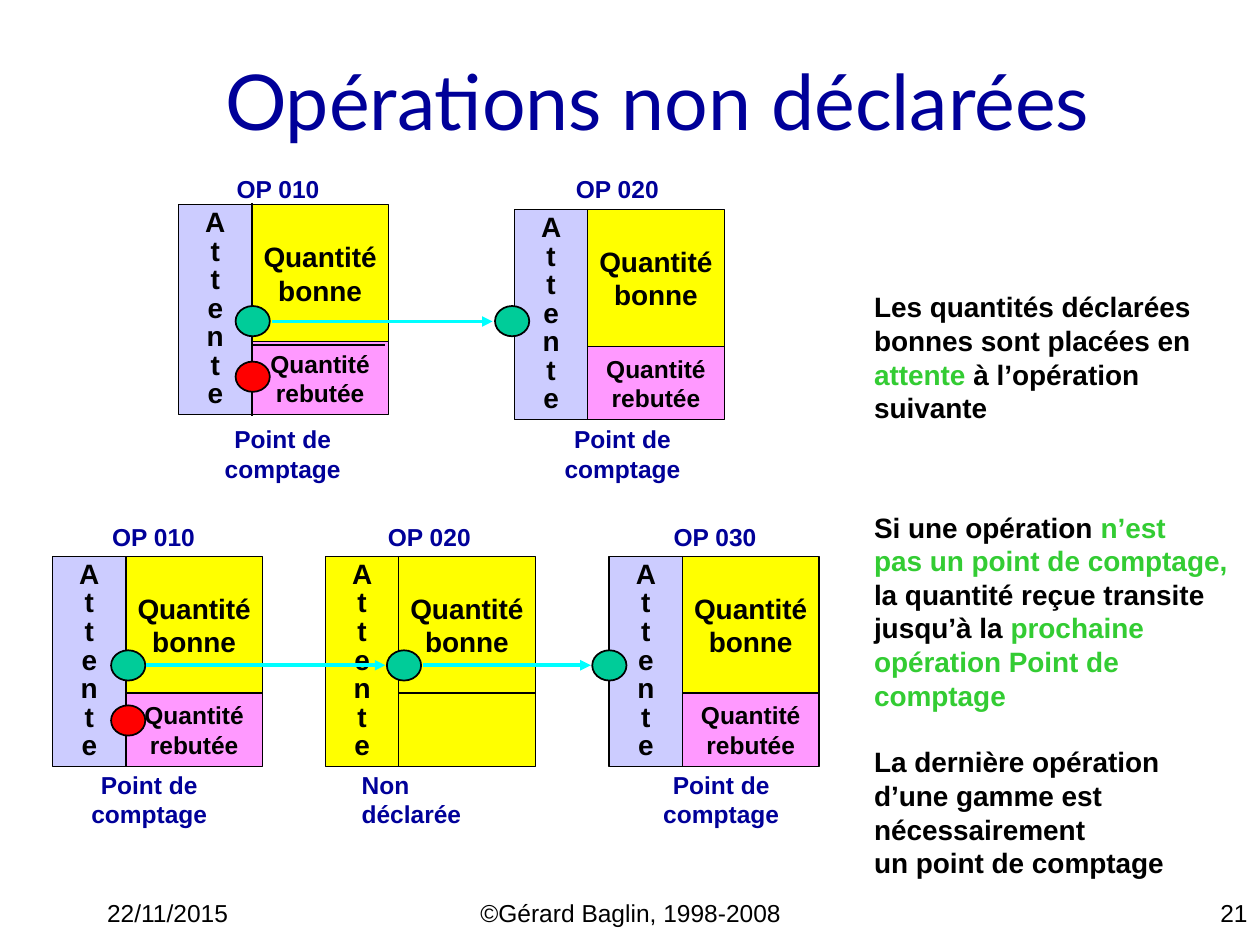
"""Build the slide on undeclared operations and their counting points."""
from copy import deepcopy

from lxml import etree
from pptx import Presentation
from pptx import util as u
from pptx.dml.color import RGBColor
from pptx.enum import shapes, text
from pptx.oxml import ns

BLACK = RGBColor(0x00, 0x00, 0x00)
NAVY = RGBColor(0x00, 0x00, 0x99)
LILAC = RGBColor(0xCC, 0xCC, 0xFF)
YELLOW = RGBColor(0xFF, 0xFF, 0x00)
PINK = RGBColor(0xFF, 0x99, 0xFF)
TEAL = RGBColor(0x00, 0xCC, 0x99)
RED = RGBColor(0xFF, 0x00, 0x00)
CYAN = RGBColor(0x00, 0xFF, 0xFF)
GREEN = RGBColor(0x33, 0xCC, 0x33)

LEFT = text.PP_ALIGN.LEFT
CENTER = text.PP_ALIGN.CENTER
RIGHT = text.PP_ALIGN.RIGHT

NARROW, WIDE, HIGH = 1.48, 2.75, 4.23
DOT_WIDTH, DOT_HEIGHT = 0.69, 0.61
COUNTING_POINT = "Point de comptage"


def write_text(frame, paragraphs, size=14, color=BLACK, bold=True, font="Arial",
               align=LEFT, spacing=None, gaps=None):
    """Fill a frame with paragraphs, each a string or a list of (words, colour) runs."""
    for index, content in enumerate(paragraphs):
        paragraph = frame.paragraphs[0] if index == 0 else frame.add_paragraph()
        paragraph.alignment = align
        if spacing:
            paragraph.line_spacing = spacing
        if gaps and index in gaps:
            paragraph.space_before = u.Pt(gaps[index])
        runs = [(content, color)] if isinstance(content, str) else content
        for words, run_color in runs:
            for number, line in enumerate(words.split("\n")):
                if number:
                    paragraph.add_line_break()
                run = paragraph.add_run()
                run.text = line
                run.font.size = u.Pt(size)
                run.font.bold = bold
                run.font.name = font
                run.font.color.rgb = run_color
        for line_break in paragraph._p.findall(ns.qn("a:br")):
            line_break.append(deepcopy(paragraph._p.find(ns.qn("a:r")).rPr))


class SlideBuilder:
    """Hold the slide and draw each kind of element on it."""

    def __init__(self, slide):
        """Keep the current slide."""
        self.slide = slide

    def title(self, words, left, top, width, height):
        """Place and format the title placeholder."""
        shape = self.slide.shapes.title
        shape.left, shape.top = u.Cm(left), u.Cm(top)
        shape.width, shape.height = u.Cm(width), u.Cm(height)
        shape.text_frame.vertical_anchor = text.MSO_ANCHOR.MIDDLE
        write_text(shape.text_frame, [words], size=44, color=NAVY, bold=False,
                   font="Lato", align=RIGHT)

    def text_box(self, paragraphs, left, top, width, height, wrap=True, **text_format):
        """Add a text box."""
        box = self.slide.shapes.add_textbox(u.Cm(left), u.Cm(top), u.Cm(width), u.Cm(height))
        box.text_frame.word_wrap = wrap
        write_text(box.text_frame, paragraphs, **text_format)

    def shape(self, parent, kind, left, top, width, height, fill, line_width):
        """Add an outlined preset shape to a slide or group."""
        shape = parent.shapes.add_shape(kind, u.Cm(left), u.Cm(top), u.Cm(width), u.Cm(height))
        shape.shadow.inherit = False
        shape.fill.solid()
        shape.fill.fore_color.rgb = fill
        shape.line.color.rgb = BLACK
        shape.line.width = u.Pt(line_width)
        return shape

    def cell(self, group, left, top, width, height, fill, words, **text_format):
        """Add one rectangle of an operation."""
        shape = self.shape(group, shapes.MSO_SHAPE.RECTANGLE, left, top, width, height, fill, 0.75)
        shape.text_frame.word_wrap = False
        shape.text_frame.vertical_anchor = text.MSO_ANCHOR.MIDDLE
        write_text(shape.text_frame, words, align=CENTER, **text_format)

    def operation(self, left, top, declared=True):
        """Add the grouped waiting, good and scrap cells of an operation."""
        group = self.slide.shapes.add_group_shape()
        inner = left + NARROW
        self.cell(group, left, top, NARROW, HIGH, LILAC if declared else YELLOW,
                  ["\n".join("Attente")], size=16, spacing=0.85)
        self.cell(group, inner, top, WIDE, WIDE, YELLOW, ["Quantité", "bonne"], size=16)
        self.cell(group, inner, top + WIDE, WIDE, NARROW, PINK if declared else YELLOW,
                  ["Quantité", "rebutée"] if declared else [])

    def dot(self, left, top, fill):
        """Add a counting dot."""
        self.shape(self.slide, shapes.MSO_SHAPE.OVAL, left, top, DOT_WIDTH, DOT_HEIGHT, fill, 1)

    def line(self, start, end, color=BLACK, width=1, arrow=False):
        """Add a straight line, with an arrowhead if asked."""
        connector = self.slide.shapes.add_connector(
            shapes.MSO_CONNECTOR.STRAIGHT, *(u.Cm(value) for value in (*start, *end)))
        connector.line.color.rgb = color
        connector.line.width = u.Pt(width)
        if arrow:
            etree.SubElement(connector.line._get_or_add_ln(), ns.qn("a:tailEnd"), type="triangle")
        etree.SubElement(connector._element.spPr, ns.qn("a:effectLst"))


def main():
    """Draw both flows, their comments and the footer."""
    presentation = Presentation()
    presentation.slide_width, presentation.slide_height = u.Cm(25.4), u.Cm(19.05)
    builder = SlideBuilder(presentation.slides.add_slide(presentation.slide_layouts[5]))
    builder.title("Opérations non déclarées", 0.64, 0.42, 21.59, 3.18)

    for left, top, declared in ((12.28, 11.22, True), (6.56, 11.22, False), (1.06, 11.22, True),
                                (10.37, 4.23, True), (3.6, 4.13, True)):
        builder.operation(left, top, declared)

    for words, left, top in (("OP 010", 4.52, 3.39), ("OP 020", 11.36, 3.39),
                             ("OP 010", 2.01, 10.39), ("OP 020", 7.57, 10.39),
                             ("OP 030", 13.33, 10.39)):
        builder.text_box([words], left, top, 2.18, 0.85, wrap=False, color=NAVY)
    for left, top in ((3.25, 8.43), (10.1, 8.43), (0.56, 15.39), (12.09, 15.39)):
        builder.text_box([COUNTING_POINT], left, top, 4.9, 0.85, color=NAVY, align=CENTER)
    builder.text_box(["Non déclarée"], 7.04, 15.39, 3.56, 0.85, color=NAVY)

    builder.line((5.08, 4.09), (5.08, 8.38))
    builder.line((5.1, 6.95), (7.77, 6.95))
    for left, top, fill in ((4.75, 6.17, TEAL), (9.98, 6.17, TEAL), (4.75, 7.29, RED),
                            (2.24, 13.11, TEAL), (7.8, 13.11, TEAL), (11.94, 13.11, TEAL),
                            (2.24, 14.22, RED)):
        builder.dot(left, top, fill)
    for start, end, height in ((5.49, 9.93, 6.48), (2.95, 7.77, 13.41), (8.53, 11.91, 13.41)):
        builder.line((start, height), (end, height), color=CYAN, width=2, arrow=True)

    builder.text_box([
        "Les quantités déclarées",
        [("bonnes sont placées en ", BLACK), ("attente", GREEN), (" à l’opération suivante", BLACK)],
    ], 17.37, 5.72, 8.03, 2.97, size=16)
    builder.text_box([
        [("Si une opération ", BLACK), ("n’est", GREEN)],
        [("pas un point de comptage,", GREEN)],
        "la quantité reçue transite",
        [("jusqu’à la ", BLACK), ("prochaine", GREEN)],
        [("opération Point de comptage", GREEN)],
        "La dernière opération d’une gamme est nécessairement",
        "un point de comptage",
    ], 17.37, 10.16, 7.72, 7.72, size=16, gaps={5: 19})

    for words, left, width, align in (("22/11/2015", 1.91, 5.28, LEFT),
                                      ("©Gérard Baglin, 1998-2008", 8.69, 8.05, CENTER),
                                      ("21", 20.12, 5.28, RIGHT)):
        builder.text_box([words], left, 17.98, width, 0.64, bold=False, align=align)

    presentation.save("out.pptx")


if __name__ == "__main__":
    main()
